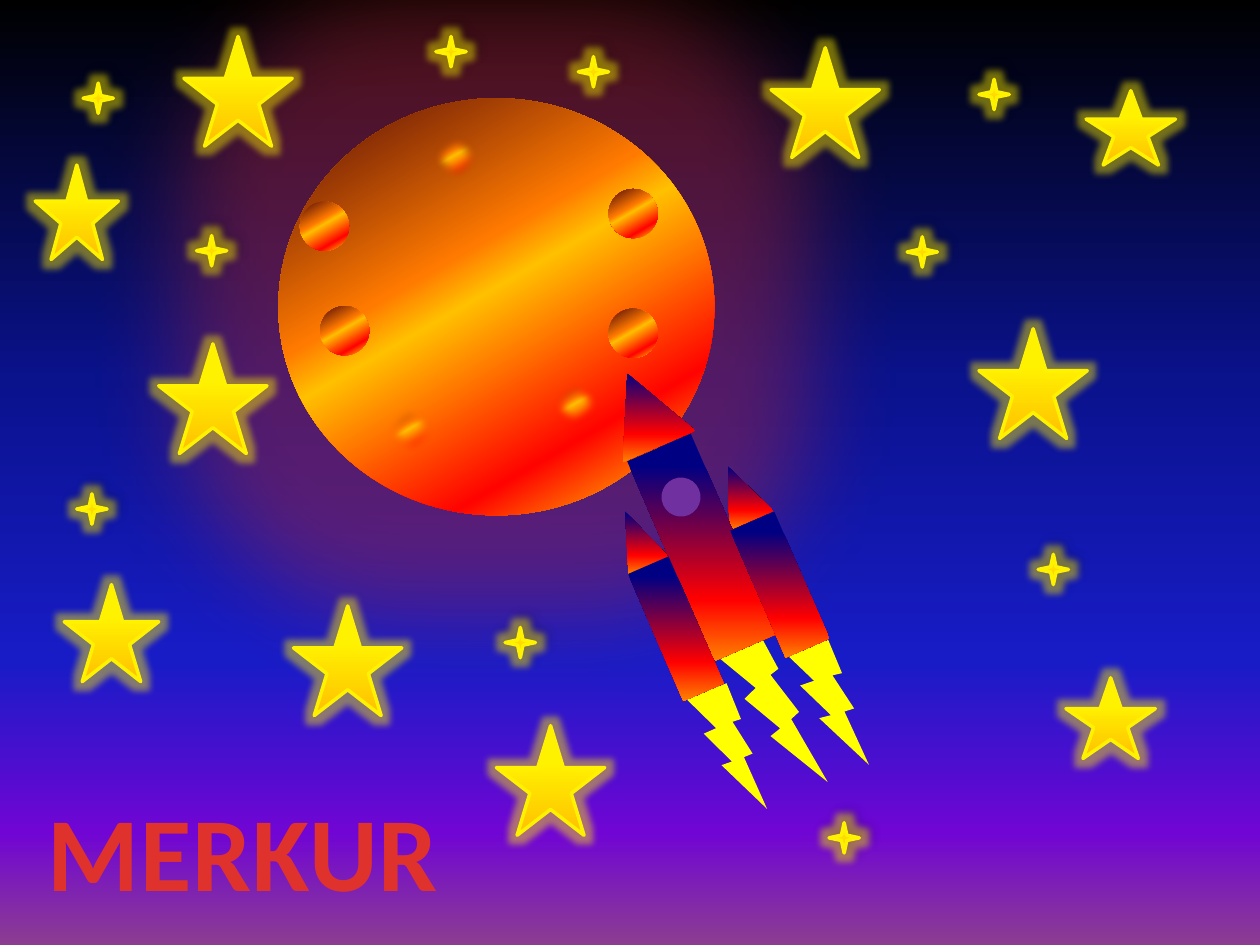
import pptx
import pptx.util
from lxml import etree
from pptx.dml.color import RGBColor
from pptx.enum.shapes import MSO_SHAPE
from pptx.oxml.ns import qn

TITLE_RED = RGBColor(0xE0, 0x32, 0x2D)
FLAME_YELLOW = RGBColor(0xFF, 0xFF, 0x00)
WINDOW_PURPLE = RGBColor(0x70, 0x30, 0xA0)
STAR_YELLOW = RGBColor(0xFF, 0xF2, 0x00)
STAR_GOLD = RGBColor(0xFF, 0xC0, 0x00)
PLANET_GLOW = RGBColor(0xC0, 0x28, 0x2D)
BLACK = RGBColor(0, 0, 0)
RED = RGBColor(0xFF, 0x03, 0x00)

# Gradients: (position in percent, colour) stops and a clockwise angle
SKY = ([(0, BLACK), (40, RGBColor(0x0A, 0x12, 0x8C)), (70, RGBColor(0x18, 0x1C, 0xC7)),
        (88, RGBColor(0x70, 0x05, 0xD4)), (100, RGBColor(0x8C, 0x3D, 0x91))], 90)
LAVA = ([(0, STAR_YELLOW), (23, RED), (53, STAR_GOLD),
         (61, RGBColor(0xFF, 0x7A, 0x00)), (100, RGBColor(0x4D, 0x08, 0x08))], 240)
HULL = ([(14, RGBColor(0x00, 0x00, 0x82)), (73, RGBColor(0xFF, 0, 0)),
         (100, RGBColor(0xFF, 0x82, 0x00))], 90)
BIG_STAR = ([(33, STAR_YELLOW), (99, STAR_GOLD)], 90)
SMALL_STAR = ([(9, STAR_YELLOW), (100, STAR_GOLD)], 90)

# Boxes are left, top, width, height in inches
PLANET = (2.21, 0.78, 3.46, 3.31)
CRATER_SIZE = 0.39
SHARP_CRATERS = [(2.38, 1.6), (4.83, 1.5), (2.54, 2.43), (4.83, 2.45)]
SOFT_CRATERS = [(3.07, 3.22), (3.42, 1.05), (4.38, 3.02)]

ROCKET_TILT = 336.5
FLAMES = [((6.14, 5.06, 0.85, 0.94), 10.6), ((5.4, 5.43, 0.76, 0.94), 8.3),
          ((5.73, 4.95, 0.79, 1.29), 355.5)]
NOSES = [(4.79, 2.94, 0.63, 0.63), (5.68, 3.68, 0.38, 0.47), (4.88, 4.04, 0.35, 0.47)]
BODIES = [(5.3, 3.48, 0.55, 1.73), (6, 4.09, 0.38, 1.1), (5.19, 4.44, 0.35, 1.1)]
WINDOW = (5.25, 3.79, 0.31, 0.31)

BIG_STAR_SIZE = (0.86, 0.87)
BIG_STARS = [(1.46, 0.29), (1.26, 2.73), (2.33, 4.81), (6.12, 0.38), (3.94, 5.76), (7.77, 2.61)]
MEDIUM_STARS = [(0.28, 1.31, 0.66, 0.75), (0.51, 4.64, 0.75, 0.77),
                (8.46, 5.38, 0.71, 0.64), (8.62, 0.72, 0.71, 0.59)]
SMALL_STAR_SIZE = 0.24
SMALL_STARS = [(1.56, 1.87), (0.66, 0.66), (4.59, 0.45), (3.46, 0.29), (0.61, 3.92),
               (6.58, 6.53), (4.01, 4.98), (7.77, 0.63), (8.24, 4.4), (7.2, 1.88)]


def add_node(parent, tag, **attributes):
    return etree.SubElement(parent, qn(tag), {key: str(value) for key, value in attributes.items()})


def add_color(parent, color, percent=100):
    node = add_node(parent, "a:srgbClr", val=color)
    if percent < 100:
        add_node(node, "a:alpha", val=percent * 1000)


def set_gradient(fill, element, gradient):
    """Fill with any number of stops; the bands stay level when a shape is turned."""
    stops, angle = gradient
    fill.gradient()
    node = next(element.iter(qn("a:gradFill")))
    node.set("rotWithShape", "0")
    for child in list(node):
        node.remove(child)
    stop_list = add_node(node, "a:gsLst")
    for position, color in stops:
        add_color(add_node(stop_list, "a:gs", pos=position * 1000), color)
    add_node(node, "a:lin", ang=angle * 60000, scaled=0)


def add_part(group, kind, box, fill, rotation=0):
    shape = group.shapes.add_shape(kind, *(pptx.util.Inches(length) for length in box))
    shape.rotation = rotation
    shape.shadow.inherit = False
    shape.line.fill.background()
    if isinstance(fill, RGBColor):
        shape.fill.solid()
        shape.fill.fore_color.rgb = fill
    else:
        set_gradient(shape.fill, shape.element, fill)
    return shape


def add_effect(shape, tag, color=None, percent=100, **attributes):
    effects = next(shape.element.iter(qn("a:effectLst")))
    effect = add_node(effects, tag, **attributes)
    if color is not None:
        add_color(effect, color, percent)


def add_star(group, kind, box, fill):
    star = add_part(group, kind, box, fill)
    star.line.color.rgb = STAR_YELLOW
    star.line.width = pptx.util.Pt(2)
    add_effect(star, "a:glow", STAR_YELLOW, 45, rad=pptx.util.Pt(8))
    return star


def add_title(slide):
    box = slide.shapes.add_textbox(*(pptx.util.Inches(n) for n in (0.28, 6.19, 3.36, 1.11)))
    box.text_frame.word_wrap = True
    paragraph = box.text_frame.paragraphs[0]
    run = paragraph.add_run()
    run.text = "MERKUR"
    run.font.name = "Calibri"
    run.font.size = pptx.util.Pt(60)
    run.font.bold = True
    run.font.color.rgb = TITLE_RED
    next(box.element.iter(qn("a:rPr"))).set("spc", "50")


def add_planet(slide):
    group = slide.shapes.add_group_shape()
    planet = add_part(group, MSO_SHAPE.OVAL, PLANET, LAVA)
    add_effect(planet, "a:glow", PLANET_GLOW, 40, rad=pptx.util.Pt(110))
    for place in SHARP_CRATERS + SOFT_CRATERS:
        crater = add_part(group, MSO_SHAPE.OVAL, (*place, CRATER_SIZE, CRATER_SIZE), LAVA)
        if place in SOFT_CRATERS:
            add_effect(crater, "a:softEdge", rad=pptx.util.Pt(5))


def add_rocket(slide):
    group = slide.shapes.add_group_shape()
    for box, rotation in FLAMES:
        add_part(group, MSO_SHAPE.LIGHTNING_BOLT, box, FLAME_YELLOW, rotation)
    for kind, boxes in ((MSO_SHAPE.ISOSCELES_TRIANGLE, NOSES), (MSO_SHAPE.RECTANGLE, BODIES)):
        for box in boxes:
            add_part(group, kind, box, HULL, ROCKET_TILT)
    add_part(group, MSO_SHAPE.OVAL, WINDOW, WINDOW_PURPLE, ROCKET_TILT)


def add_stars(slide):
    group = slide.shapes.add_group_shape()
    for box in [(*place, *BIG_STAR_SIZE) for place in BIG_STARS] + MEDIUM_STARS:
        add_star(group, MSO_SHAPE.STAR_5_POINT, box, BIG_STAR)
    for place in SMALL_STARS:
        star = add_star(group, MSO_SHAPE.STAR_4_POINT,
                        (*place, SMALL_STAR_SIZE, SMALL_STAR_SIZE), SMALL_STAR)
        add_effect(star, "a:outerShdw", BLACK, 40, blurRad=pptx.util.Pt(4),
                   dist=pptx.util.Pt(3), dir=315 * 60000)


def main():
    presentation = pptx.Presentation()
    presentation.slide_width = pptx.util.Inches(10)
    presentation.slide_height = pptx.util.Inches(7.5)
    slide = presentation.slides.add_slide(presentation.slide_layouts[6])
    set_gradient(slide.background.fill, slide.element, SKY)
    add_title(slide)
    add_planet(slide)
    add_rocket(slide)
    add_stars(slide)
    presentation.save("out.pptx")


if __name__ == "__main__":
    main()
